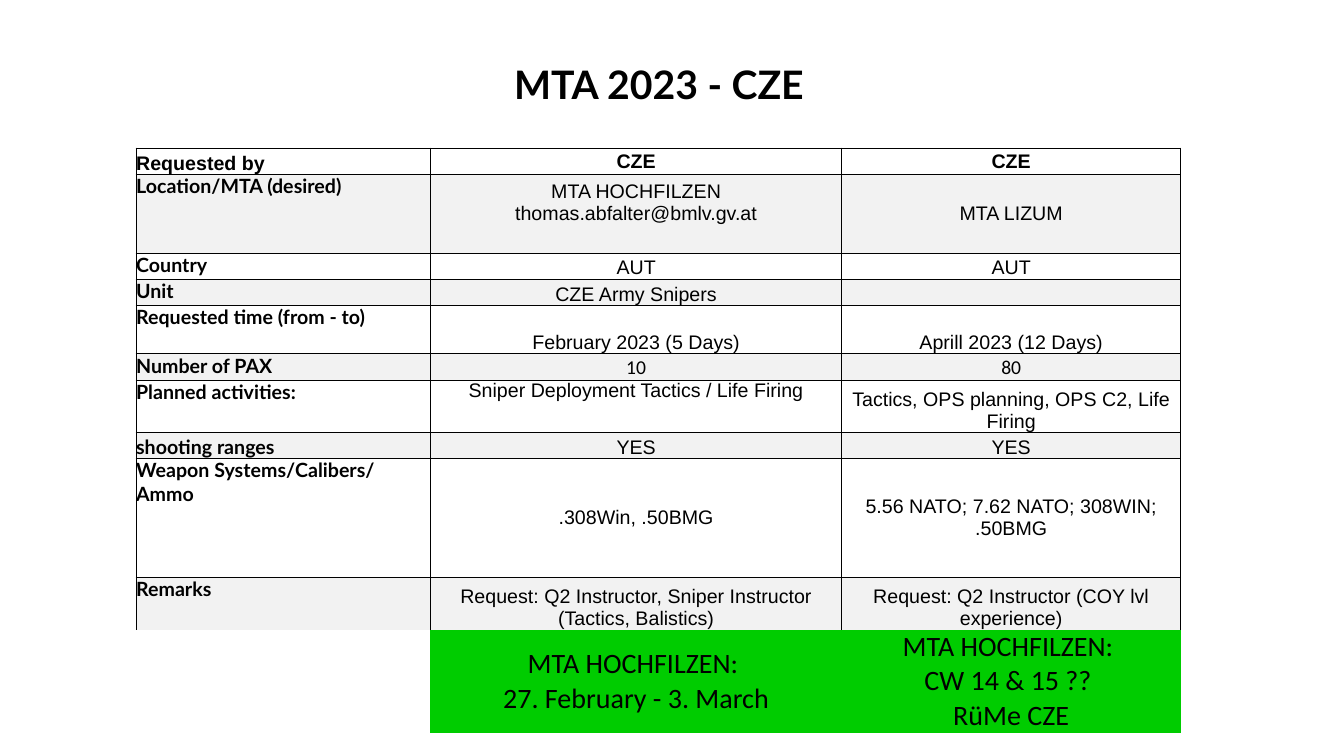
"""Build the MTA 2023 request slide for CZE."""
from dataclasses import dataclass

from lxml.etree import SubElement
from pptx import Presentation
from pptx.dml.color import RGBColor
from pptx.enum.text import MSO_ANCHOR, PP_ALIGN
from pptx.oxml.ns import qn
from pptx.slide import Slide
from pptx.table import _Cell
from pptx.util import Inches, Pt

BLACK = RGBColor(0x00, 0x00, 0x00)
WHITE = RGBColor(0xFF, 0xFF, 0xFF)
GREY = RGBColor(0xF2, 0xF2, 0xF2)
GREEN = RGBColor(0x00, 0xCC, 0x00)
ANCHORS = {"t": MSO_ANCHOR.TOP, "m": MSO_ANCHOR.MIDDLE, "b": MSO_ANCHOR.BOTTOM}
COLUMN_WIDTHS = (2.92, 4.08, 3.36)


@dataclass(frozen=True)
class RequestRow:
    height: float
    texts: tuple[str, str, str]
    anchors: str = "tbb"
    fill: RGBColor | None = None
    label_font: str = "Lato"
    value_font: str = "Arial"
    value_bold: bool = False
    size: int = 14
    side: float = 1
    top: float = 0.5
    bottom: float = 0.5


ROWS = (
    RequestRow(0.26, ("Requested by", "CZE", "CZE"), "bmm", label_font="Arial",
               value_bold=True, top=1, bottom=1),
    RequestRow(0.78, ("Location/MTA (desired)",
                      "MTA HOCHFILZEN\vthomas.abfalter@bmlv.gv.at\v", "MTA LIZUM"),
               "tmm", GREY, top=1),
    RequestRow(0.26, ("Country", "AUT", "AUT")),
    RequestRow(0.26, ("Unit", "CZE Army Snipers", ""), fill=GREY),
    RequestRow(0.48, ("Requested time (from - to)", "February 2023 (5 Days)",
                      "Aprill 2023 (12 Days)")),
    RequestRow(0.26, ("Number of PAX", "10", "80"), fill=GREY, value_font="Calibri"),
    RequestRow(0.52, ("Planned activities:", "Sniper Deployment Tactics / Life Firing",
                      "Tactics, OPS planning, OPS C2, Life Firing"), "ttb"),
    RequestRow(0.26, ("shooting ranges", "YES", "YES"), "bbb", GREY),
    RequestRow(1.18, ("Weapon Systems/Calibers/ Ammo", ".308Win, .50BMG",
                      "5.56 NATO; 7.62 NATO; 308WIN; .50BMG"), "tmm", WHITE),
    RequestRow(0.52, ("Remarks",
                      "Request: Q2 Instructor, Sniper Instructor (Tactics, Balistics)",
                      "Request: Q2 Instructor (COY lvl experience)"),
               fill=GREY, bottom=0),
    RequestRow(0.73, ("", "MTA HOCHFILZEN: \n27. February - 3. March",
                      "MTA HOCHFILZEN: \nCW 14 & 15 ?? \nRüMe CZE"),
               "tmm", GREEN, value_font="Calibri", size=20, side=0, top=0),
)


def set_borders(cell: _Cell, row: RequestRow) -> None:
    """Draw the four cell edges, leaving out those of zero width."""
    properties = cell._tc.get_or_add_tcPr()
    edges = {"a:lnL": row.side, "a:lnR": row.side, "a:lnT": row.top, "a:lnB": row.bottom}
    for tag, width in edges.items():
        visible = width > 0 and row.side > 0
        line = SubElement(properties, qn(tag), w=str(Pt(width)))
        fill = SubElement(line, qn("a:solidFill" if visible else "a:noFill"))
        if visible:
            SubElement(fill, qn("a:srgbClr"), val=str(BLACK))


def fill_cell(cell: _Cell, row: RequestRow, column: int) -> None:
    """Write and format one cell of a request row."""
    is_label = column == 0
    set_borders(cell, row)
    if row.fill is None or (is_label and row.side == 0):
        cell.fill.background()
    else:
        cell.fill.solid()
        cell.fill.fore_color.rgb = row.fill
    cell.margin_left = cell.margin_right = cell.margin_top = cell.margin_bottom = 0
    cell.vertical_anchor = ANCHORS[row.anchors[column]]
    cell.text_frame.text = row.texts[column]
    for paragraph in cell.text_frame.paragraphs:
        paragraph.alignment = PP_ALIGN.LEFT if is_label else PP_ALIGN.CENTER
        for run in paragraph.runs:
            run.font.name = row.label_font if is_label else row.value_font
            run.font.size = Pt(row.size)
            run.font.bold = is_label or row.value_bold
            run.font.color.rgb = BLACK
        size = str(row.size * 100)
        for line_break in paragraph._p.findall(qn("a:br")):
            SubElement(line_break, qn("a:rPr"), sz=size)
        end = SubElement(paragraph._p, qn("a:endParaRPr"), sz=size)
        SubElement(end, qn("a:latin"), typeface=row.value_font)


def add_title(slide: Slide) -> None:
    """Place and format the slide title."""
    title = slide.shapes.title
    title.left, title.top = Inches(1.68), Inches(0.44)
    title.width, title.height = Inches(9.71), Inches(0.79)
    title.text_frame.text = "MTA 2023 - CZE"
    title.text_frame.vertical_anchor = MSO_ANCHOR.MIDDLE
    paragraph = title.text_frame.paragraphs[0]
    paragraph.alignment = PP_ALIGN.CENTER
    font = paragraph.runs[0].font
    font.name, font.size, font.bold = "Lato", Pt(28), True
    font.color.rgb = BLACK


def add_request_table(slide: Slide) -> None:
    """Add the table of training requests."""
    height = sum(row.height for row in ROWS)
    table = slide.shapes.add_table(
        len(ROWS), len(COLUMN_WIDTHS), Inches(1.35), Inches(1.47),
        Inches(sum(COLUMN_WIDTHS)), Inches(height)).table
    table.first_row = table.horz_banding = False
    for column, width in zip(table.columns, COLUMN_WIDTHS):
        column.width = Inches(width)
    for table_row, row in zip(table.rows, ROWS):
        table_row.height = Inches(row.height)
        for column, cell in enumerate(table_row.cells):
            fill_cell(cell, row, column)


def main() -> None:
    """Create and save the presentation."""
    presentation = Presentation()
    presentation.slide_width, presentation.slide_height = Inches(13.33), Inches(7.5)
    slide = presentation.slides.add_slide(presentation.slide_layouts[5])
    add_title(slide)
    add_request_table(slide)
    presentation.save("out.pptx")


if __name__ == "__main__":
    main()
